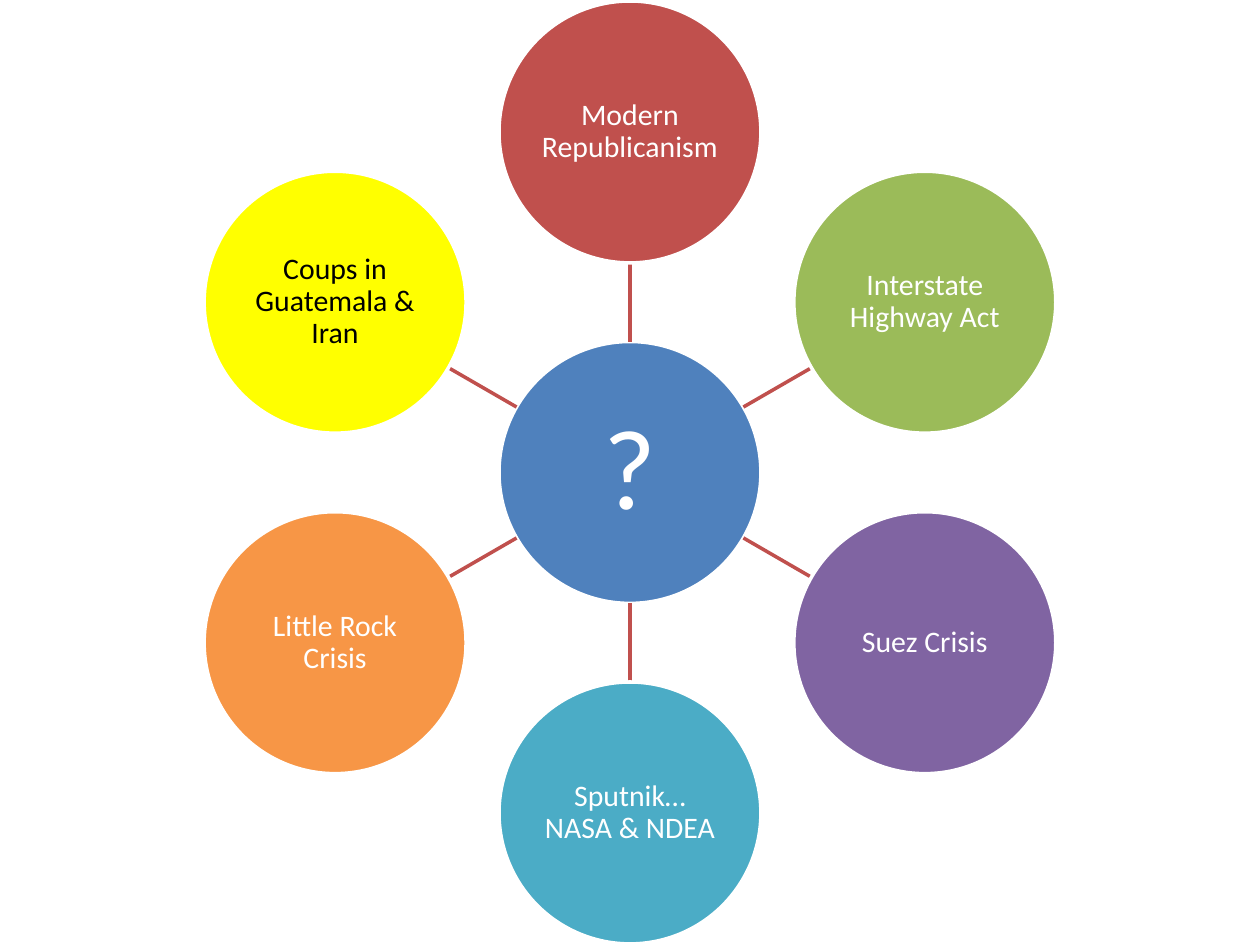
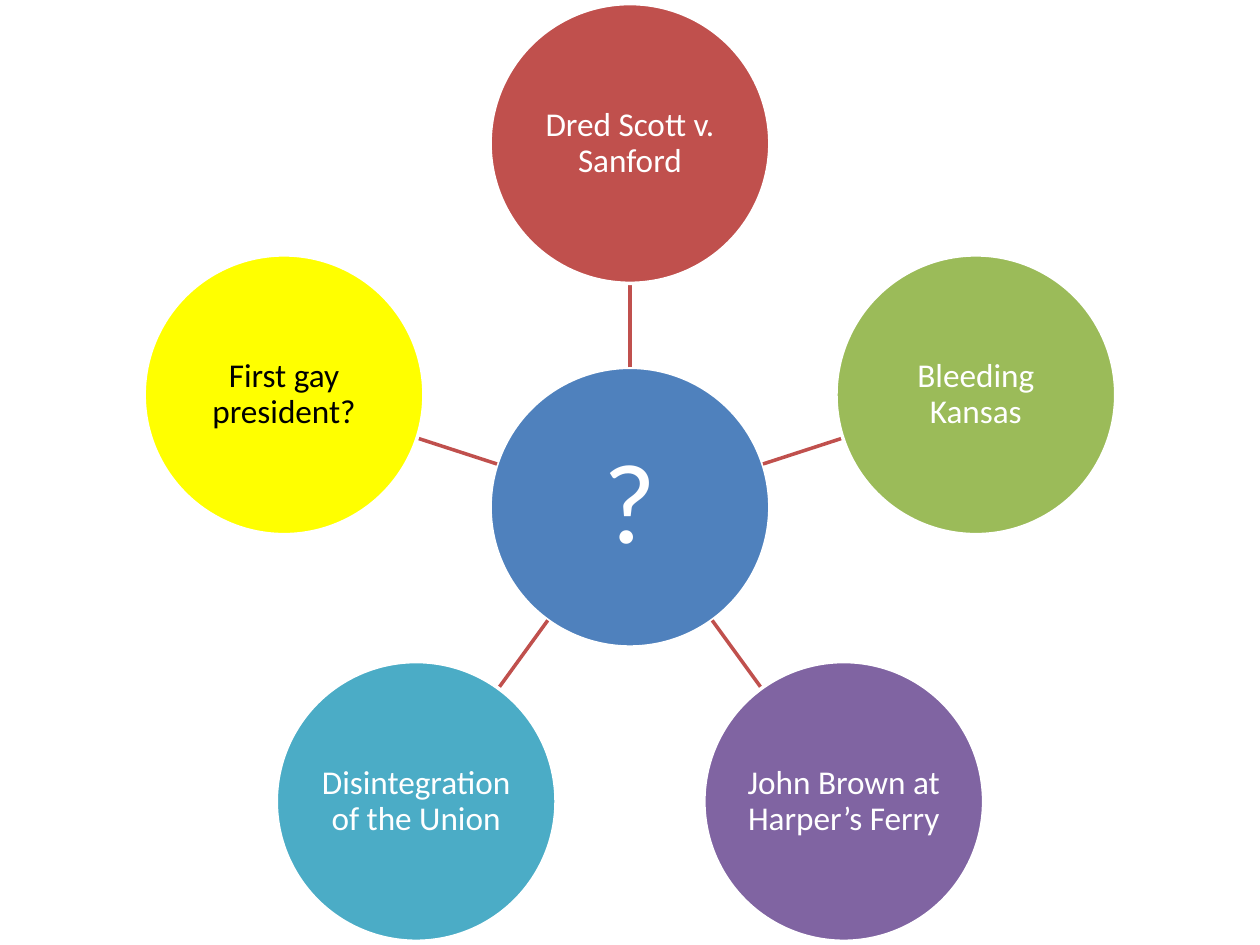
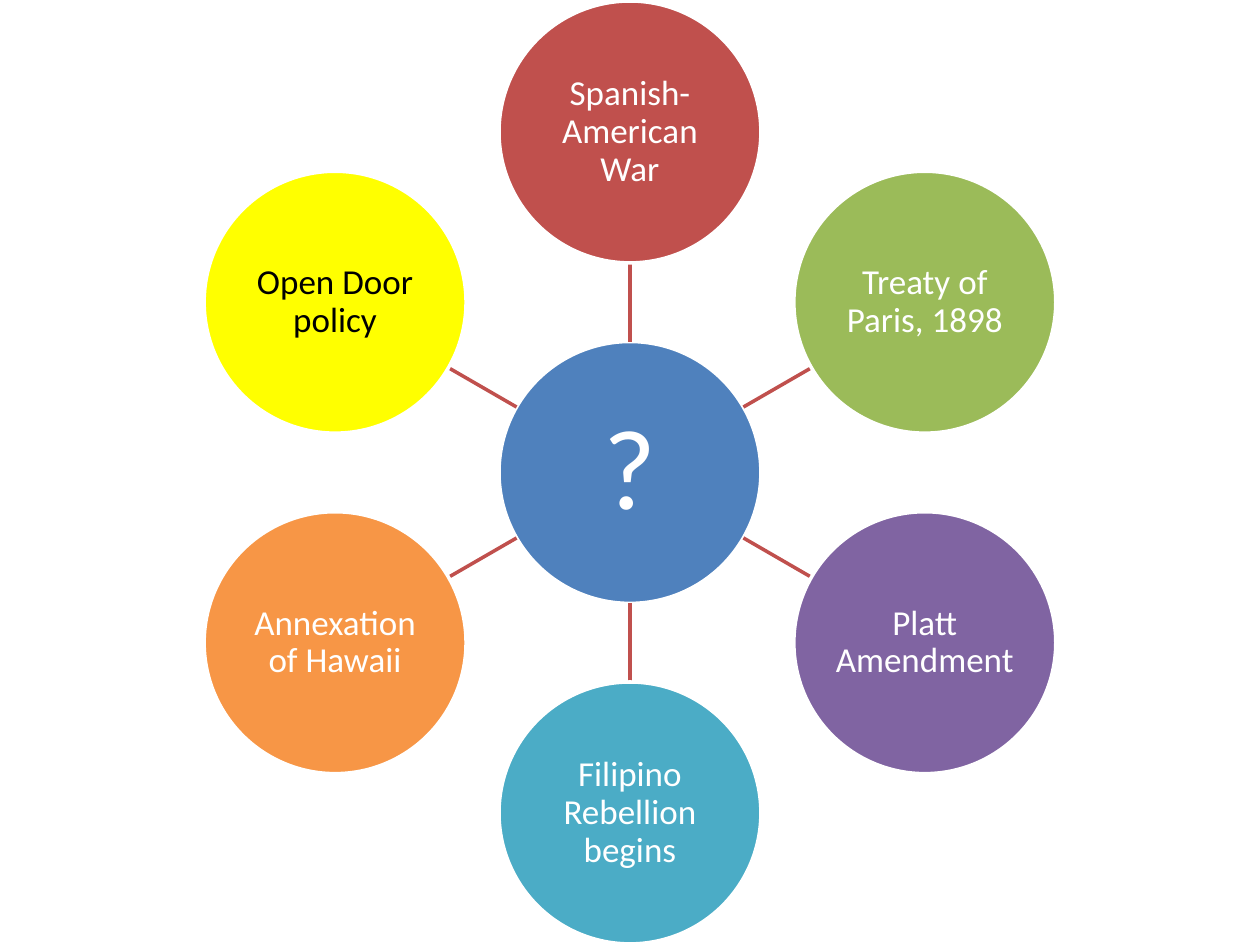
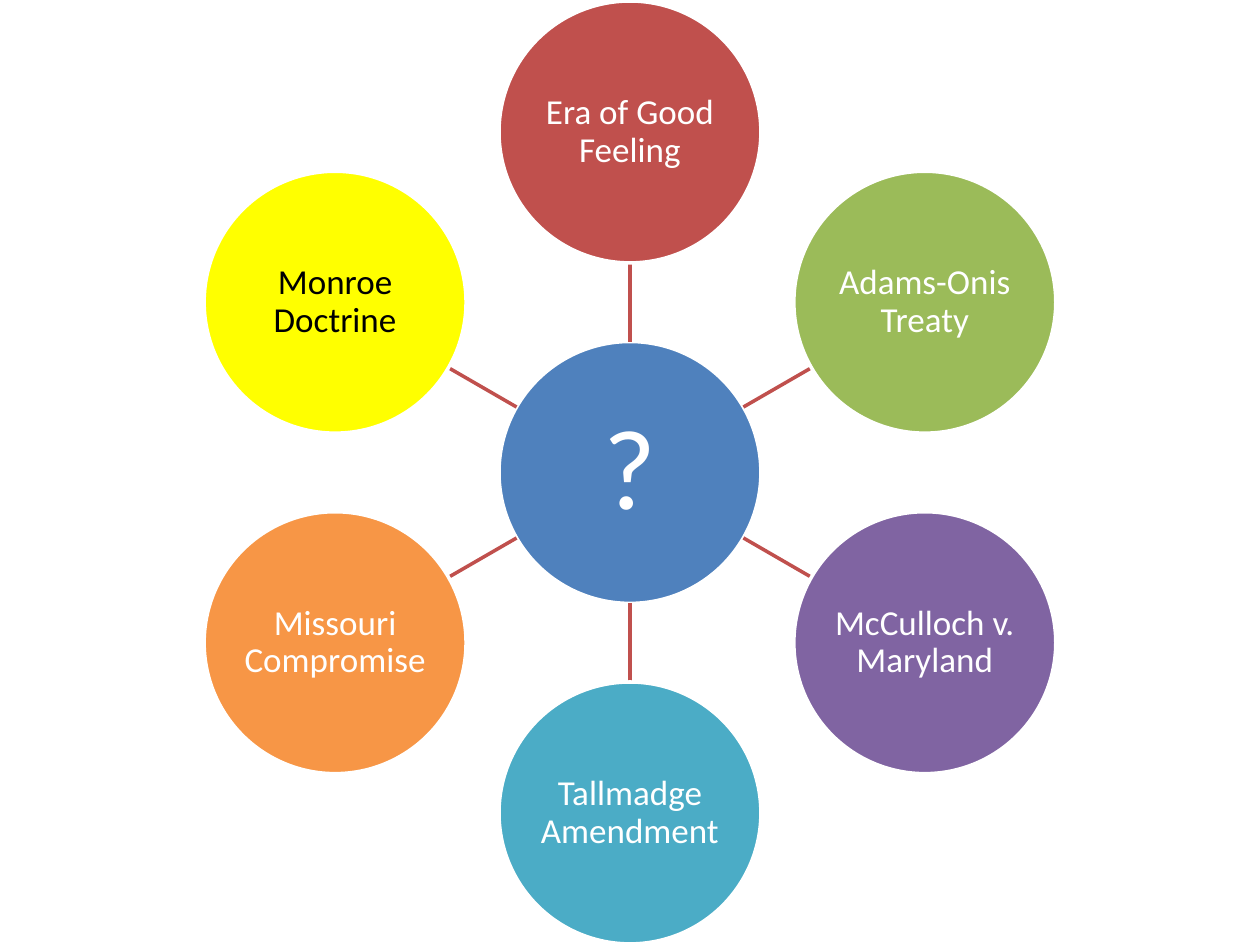
import math

import pptx
import pptx.util
import pptx.dml.color
import pptx.enum.shapes
import pptx.enum.text
import pptx.oxml.ns
from lxml import etree

Cm = pptx.util.Cm
Pt = pptx.util.Pt

HUES = {
    "white": "FFFFFF",
    "black": "000000",
    "blue": "4F81BD",
    "red": "C0504D",
    "green": "9BBB59",
    "purple": "8064A2",
    "teal": "4BACC6",
    "orange": "F79646",
    "yellow": "FFFF00",
}
RING = ["red", "green", "purple", "teal", "orange"]
FONT = "Calibri"
WIDTH, HEIGHT = 25.4, 19.05
REACH = 1.3

WHEELS = [
    (5.28, 17, ["Modern Republicanism", "Interstate Highway Act", "Suez Crisis",
                "Sputnik… NASA & NDEA", "Little Rock Crisis",
                "Coups in Guatemala & Iran"]),
    (5.64, 19, ["Dred Scott v. Sanford", "Bleeding Kansas",
                "John Brown at Harper’s Ferry", "Disintegration of the Union",
                "First gay president?"]),
    (5.28, 20, ["Spanish-American War", "Treaty of Paris, 1898", "Platt Amendment",
                "Filipino Rebellion begins", "Annexation of Hawaii",
                "Open Door policy"]),
    (5.28, 20, ["Era of Good Feeling", "Adams-Onis Treaty", "McCulloch v. Maryland",
                "Tallmadge Amendment", "Missouri Compromise", "Monroe Doctrine"]),
]


def tint(name):
    return pptx.dml.color.RGBColor.from_string(HUES[name])


def write(shape, text, size=20, color="white", inset=0.03):
    frame = shape.text_frame
    frame.word_wrap = True
    frame.vertical_anchor = pptx.enum.text.MSO_ANCHOR.MIDDLE
    frame.margin_left = frame.margin_right = Cm(inset)
    frame.margin_top = frame.margin_bottom = Cm(inset)
    para = frame.paragraphs[0]
    para.alignment = pptx.enum.text.PP_ALIGN.CENTER
    para.line_spacing = 0.9
    para.space_after = Pt(round(size * 0.35))
    run = para.add_run()
    run.text = text
    run.font.name = FONT
    run.font.size = Pt(size)
    run.font.color.rgb = tint(color)


def disc(slide, x, y, wide, fill, text, **style):
    shape = slide.shapes.add_shape(
        pptx.enum.shapes.MSO_SHAPE.OVAL,
        Cm(x - wide / 2), Cm(y - wide / 2), Cm(wide), Cm(wide))
    shape.shadow.inherit = False
    shape.fill.solid()
    shape.fill.fore_color.rgb = tint(fill)
    shape.line.color.rgb = tint("white")
    shape.line.width = Pt(2)
    write(shape, text, **style)


def spoke(slide, start, end):
    line = slide.shapes.add_connector(
        pptx.enum.shapes.MSO_CONNECTOR.STRAIGHT,
        *(Cm(value) for value in (*start, *end)))
    line.line.color.rgb = tint("red")
    line.line.width = Pt(2)
    etree.SubElement(line._element.spPr, pptx.oxml.ns.qn("a:effectLst"))


def wheel(slide, box, wide, size, labels):
    left, top, width, height = box
    count = len(labels)
    orbit = wide * REACH
    turns = [math.tau * step / count for step in range(count)]
    drop = max(-math.cos(turn) for turn in turns)
    x = left + width / 2
    y = top + (height + orbit * (1 - drop)) / 2

    def point(turn, far):
        return x + far * math.sin(turn), y - far * math.cos(turn)

    disc(slide, x, y, wide, "blue", "?", size=65, inset=0.13)
    fills = RING[:count - 1] + ["yellow"]
    for turn, fill, label in zip(turns, fills, labels):
        spoke(slide, point(turn, wide / 2), point(turn, orbit - wide / 2))
        ink = "black" if fill == "yellow" else "white"
        disc(slide, *point(turn, orbit), wide, fill, label, size=size, color=ink)


def main():
    deck = pptx.Presentation()
    deck.slide_width, deck.slide_height = Cm(WIDTH), Cm(HEIGHT)
    for wide, size, labels in WHEELS:
        slide = deck.slides.add_slide(deck.slide_layouts[6])
        wheel(slide, (0, 0, WIDTH, HEIGHT), wide, size, labels)
    deck.save("out.pptx")


if __name__ == "__main__":
    main()
